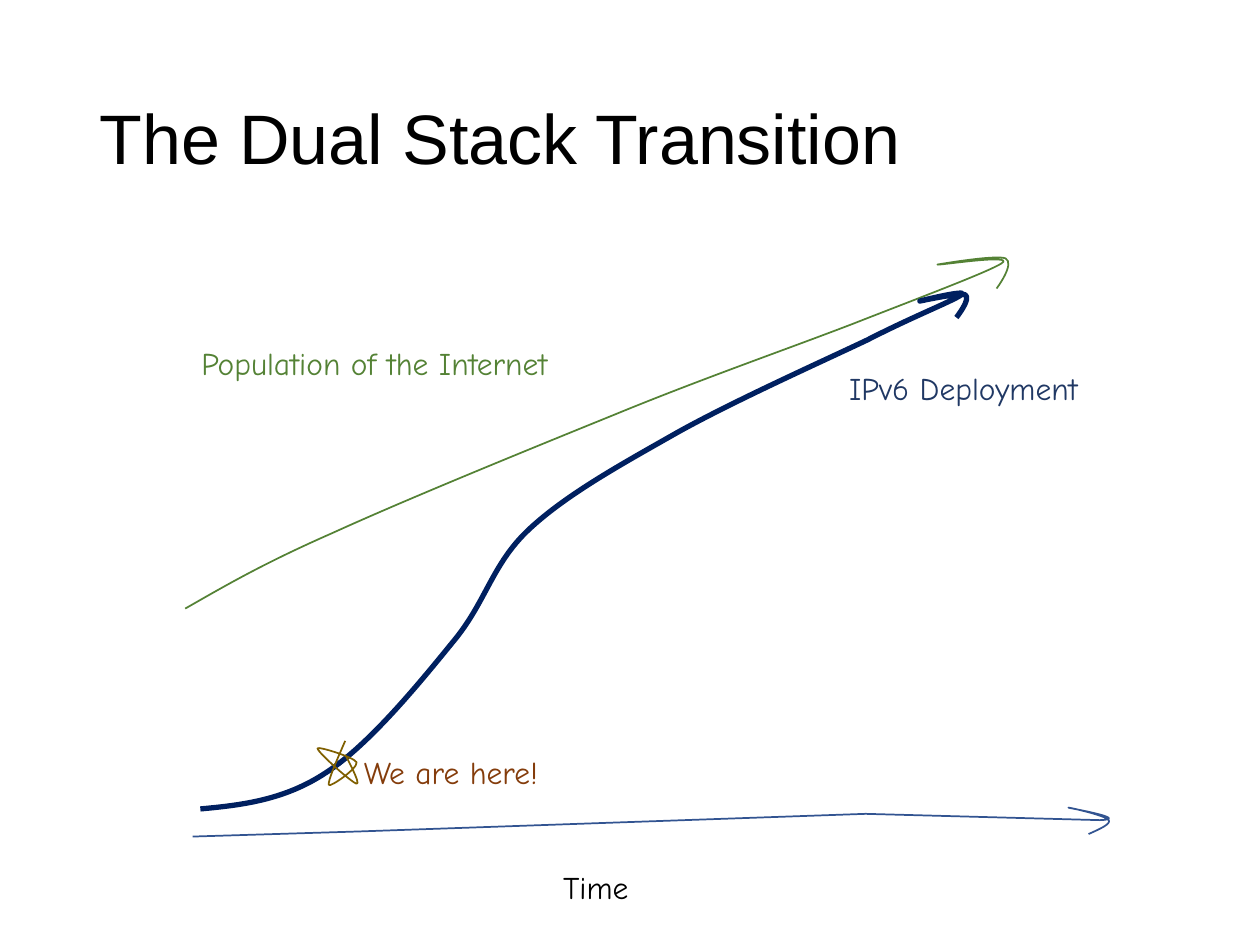
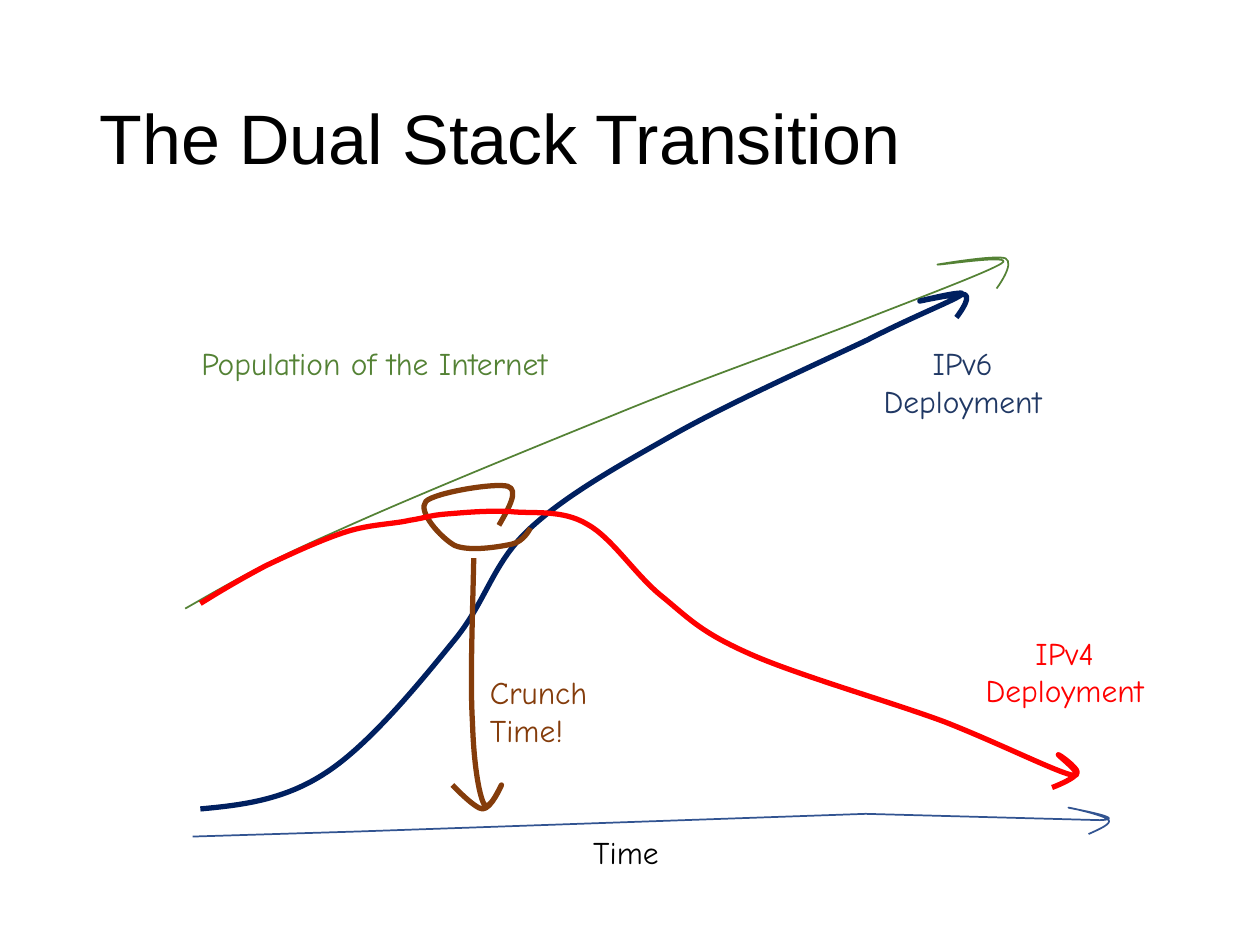
from collections import namedtuple

from lxml import etree
from pptx import Presentation
from pptx.dml.color import RGBColor
from pptx.enum.text import MSO_ANCHOR, MSO_AUTO_SIZE, PP_ALIGN
from pptx.oxml.ns import qn
from pptx.util import Inches, Pt

BLACK, GREEN, NAVY, INDIGO = "000000", "548235", "002060", "203864"
AXIS_BLUE, OLIVE, BROWN, RED = "325491", "806000", "843C0B", "FF0000"
TITLE_FONT, LABEL_FONT = "Arial", "Comic Neue"
TITLE = "The Dual Stack Transition"
THIN, THICK = 1, 3

Stroke = namedtuple("Stroke", "left top width height color weight segments")

TIME_AXIS = Stroke(1.53, 6.41, 7.27, 0.23, AXIS_BLUE, THIN, [
    (1.53, 6.64), (2.84, 6.6), (6.87, 6.46), (8.73, 6.51),
    (8.99, 6.5, 8.46, 6.41, 8.48, 6.41),
    (8.49, 6.41, 8.77, 6.47, 8.8, 6.51),
    (8.82, 6.54, 8.73, 6.58, 8.64, 6.62),
])
POPULATION = Stroke(1.47, 2.05, 6.54, 2.78, GREEN, THIN, [
    (1.47, 4.83),
    (1.77, 4.66, 2.07, 4.48, 2.64, 4.23),
    (3.21, 3.97, 4.19, 3.57, 4.88, 3.29),
    (5.56, 3.01, 6.25, 2.77, 6.77, 2.57),
    (7.28, 2.37, 7.84, 2.16, 7.95, 2.09),
    (8.07, 2.01, 7.43, 2.11, 7.44, 2.1),
    (7.44, 2.1, 7.9, 2.02, 7.98, 2.05),
    (8.06, 2.09, 7.91, 2.29, 7.91, 2.29),
])
IPV6 = Stroke(1.59, 2.33, 6.09, 4.09, NAVY, THICK, [
    (1.59, 6.42),
    (1.92, 6.39, 2.26, 6.35, 2.59, 6.13),
    (2.93, 5.91, 3.33, 5.42, 3.59, 5.1),
    (3.86, 4.78, 3.9, 4.48, 4.2, 4.2),
    (4.5, 3.92, 4.94, 3.68, 5.38, 3.43),
    (5.83, 3.18, 6.5, 2.88, 6.88, 2.7),
    (7.25, 2.51, 7.56, 2.39, 7.63, 2.34),
    (7.7, 2.29, 7.29, 2.39, 7.3, 2.39),
    (7.3, 2.39, 7.62, 2.32, 7.66, 2.34),
    (7.71, 2.37, 7.59, 2.52, 7.59, 2.52),
])
IPV4 = Stroke(1.59, 4.06, 6.96, 2.19, RED, THICK, [
    (1.59, 4.79),
    (1.75, 4.69, 1.92, 4.59, 2.11, 4.49),
    (2.3, 4.4, 2.56, 4.28, 2.75, 4.22),
    (2.94, 4.16, 3.12, 4.16, 3.25, 4.13),
    (3.38, 4.11, 3.41, 4.09, 3.54, 4.08),
    (3.67, 4.07, 3.86, 4.05, 4.05, 4.06),
    (4.23, 4.08, 4.46, 4.04, 4.66, 4.16),
    (4.86, 4.27, 5.04, 4.56, 5.25, 4.73),
    (5.46, 4.9, 5.55, 5.01, 5.93, 5.18),
    (6.3, 5.35, 7.07, 5.57, 7.5, 5.73),
    (7.93, 5.9, 8.35, 6.11, 8.5, 6.15),
    (8.65, 6.19, 8.39, 5.99, 8.4, 5.99),
    (8.41, 5.99, 8.55, 6.09, 8.55, 6.13),
    (8.54, 6.18, 8.35, 6.25, 8.35, 6.25),
])
HERE_STAR = Stroke(2.52, 5.88, 0.32, 0.35, OLIVE, THIN, [
    (2.74, 5.88),
    (2.67, 6.04, 2.6, 6.2, 2.61, 6.23),
    (2.62, 6.25, 2.84, 6.1, 2.83, 6.05),
    (2.81, 6.01, 2.52, 5.92, 2.52, 5.94),
    (2.52, 5.97, 2.79, 6.21, 2.83, 6.22),
    (2.87, 6.23, 2.74, 5.99, 2.74, 5.99),
])
CRUNCH_ARROW = Stroke(3.59, 4.43, 0.39, 1.99, BROWN, THICK, [
    (3.76, 4.43),
    (3.75, 4.92, 3.73, 5.41, 3.75, 5.74),
    (3.76, 6.06, 3.8, 6.3, 3.84, 6.38),
    (3.88, 6.46, 3.98, 6.22, 3.98, 6.23),
    (3.98, 6.23, 3.9, 6.42, 3.83, 6.42),
    (3.77, 6.42, 3.59, 6.23, 3.59, 6.23),
])
CRUNCH_LOOP = Stroke(3.37, 3.85, 0.84, 0.5, BROWN, THICK, [
    (3.96, 4.17),
    (4.04, 4.03, 4.12, 3.89, 4.03, 3.86),
    (3.93, 3.83, 3.45, 3.91, 3.38, 3.98),
    (3.31, 4.06, 3.5, 4.27, 3.61, 4.33),
    (3.73, 4.38, 3.96, 4.34, 4.06, 4.32),
    (4.16, 4.3, 4.21, 4.19, 4.21, 4.19),
])


def rgb(color):
    return RGBColor.from_string(color)


def add_run(paragraph, text, font_name, size, color):
    run = paragraph.add_run()
    run.text = text
    run.font.name = font_name
    run.font.size = Pt(size)
    run.font.color.rgb = rgb(color)


def bend_outline(drawn, stroke):
    outline = next(drawn._element.iter(qn("a:path")))
    for command in list(outline):
        outline.remove(command)
    for index, segment in enumerate(stroke.segments):
        tag = "a:cubicBezTo" if len(segment) == 6 else "a:lnTo" if index else "a:moveTo"
        command = etree.SubElement(outline, qn(tag))
        for x, y in zip(segment[::2], segment[1::2]):
            point = etree.SubElement(command, qn("a:pt"))
            point.set("x", str(Inches(x) - Inches(stroke.left)))
            point.set("y", str(Inches(y) - Inches(stroke.top)))


def draw_stroke(slide, stroke):
    left, top = Inches(stroke.left), Inches(stroke.top)
    builder = slide.shapes.build_freeform(left, top)
    opposite_corner = (left + Inches(stroke.width), top + Inches(stroke.height))
    builder.add_line_segments([opposite_corner], close=False)
    drawn = builder.convert_to_shape()
    bend_outline(drawn, stroke)
    drawn.shadow.inherit = False
    drawn.fill.background()
    drawn.line.color.rgb = rgb(stroke.color)
    drawn.line.width = Pt(stroke.weight)


def add_label(slide, lines, left, top, width, color, height=0.4,
              align=PP_ALIGN.LEFT, wrap=False):
    label = slide.shapes.add_textbox(
        Inches(left), Inches(top), Inches(width), Inches(height))
    frame = label.text_frame
    frame.word_wrap = wrap
    frame.auto_size = MSO_AUTO_SIZE.SHAPE_TO_FIT_TEXT
    for index, line in enumerate(lines):
        paragraph = frame.add_paragraph() if index else frame.paragraphs[0]
        paragraph.alignment = align
        add_run(paragraph, line, LABEL_FONT, 18, color)


def set_title(slide, width):
    title = slide.shapes.title
    title.left, title.top = Inches(0.69), Inches(0.4)
    title.width, title.height = Inches(width), Inches(1.45)
    frame = title.text_frame
    frame.auto_size = MSO_AUTO_SIZE.NONE
    frame.vertical_anchor = MSO_ANCHOR.MIDDLE
    paragraph = frame.paragraphs[0]
    paragraph.alignment = PP_ALIGN.LEFT
    paragraph.line_spacing = 0.9
    add_run(paragraph, TITLE, TITLE_FONT, 40, BLACK)


def add_transition_slide(prs, title_width, time_left, time_top):
    slide = prs.slides.add_slide(prs.slide_layouts[5])
    set_title(slide, title_width)
    draw_stroke(slide, TIME_AXIS)
    add_label(slide, ["Time"], time_left, time_top, 0.88, BLACK)
    draw_stroke(slide, POPULATION)
    add_label(slide, ["Population of the Internet"], 1.5, 2.68, 3.67, GREEN)
    draw_stroke(slide, IPV6)
    return slide


def add_present_day(prs):
    slide = add_transition_slide(prs, 8.62, 4.37, 6.84)
    add_label(slide, ["IPv6 Deployment"], 6.64, 2.88, 2.39, INDIGO)
    draw_stroke(slide, HERE_STAR)
    add_label(slide, ["We are here!"], 2.79, 5.93, 2.21, BROWN, wrap=True)


def add_crunch_time(prs):
    slide = add_transition_slide(prs, 9.16, 4.61, 6.56)
    for protocol, left, top, color in (("IPv6", 6.8, 2.68, INDIGO),
                                       ("IPv4", 7.61, 4.98, RED)):
        add_label(slide, [f"{protocol} Deployment"], left, top, 1.68, color,
                  height=0.71, align=PP_ALIGN.CENTER, wrap=True)
    draw_stroke(slide, CRUNCH_ARROW)
    add_label(slide, ["Crunch", "Time!"], 3.79, 5.29, 1.17, BROWN, height=0.71)
    draw_stroke(slide, CRUNCH_LOOP)
    draw_stroke(slide, IPV4)


def main():
    prs = Presentation()
    prs.slide_width, prs.slide_height = Inches(10), Inches(7.5)
    add_present_day(prs)
    add_crunch_time(prs)
    prs.save("out.pptx")


if __name__ == "__main__":
    main()
